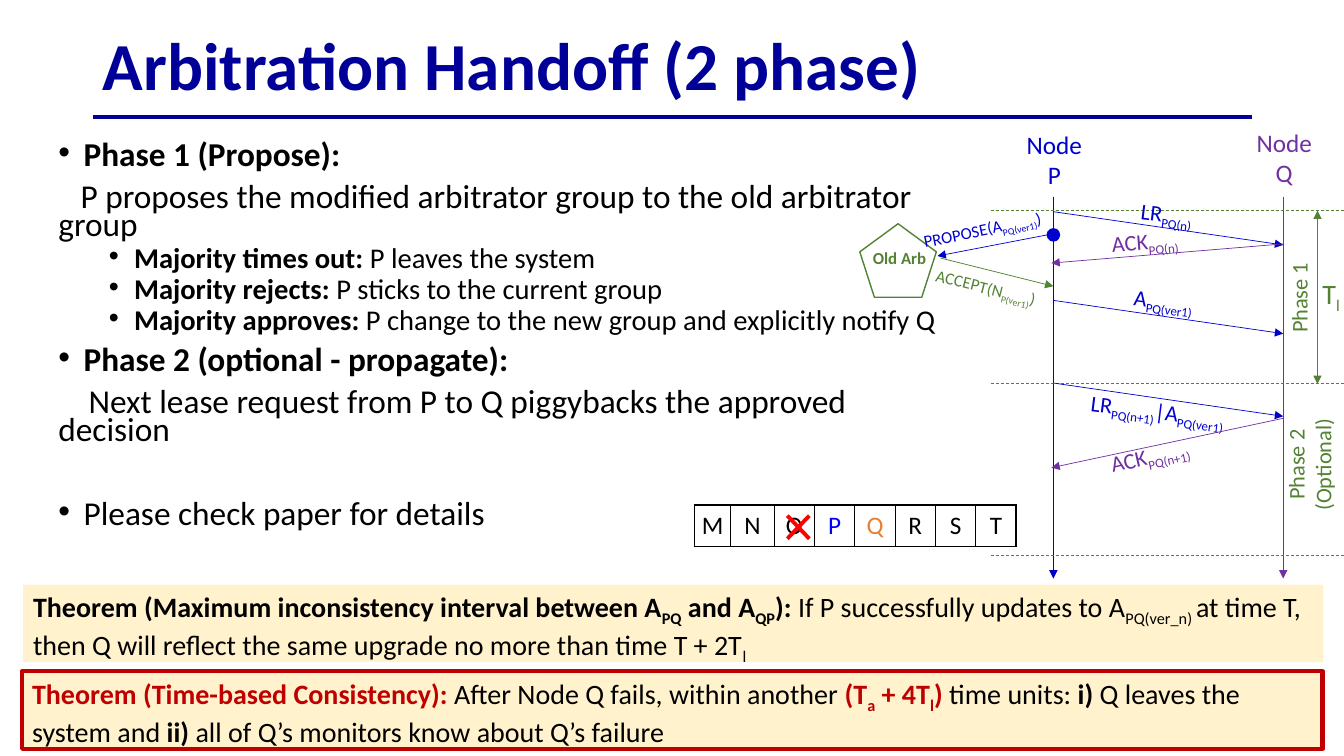
from lxml import etree
from pptx import Presentation
from pptx import util as u
from pptx.dml.color import RGBColor
from pptx.enum import dml, shapes, text
from pptx.oxml import ns

# Grid: every length below is a number of square cells, ten to the inch
CELL = u.Inches(0.1)
COLS, ROWS = 133.33, 75
FONT = "Calibri"
NAVY, BLUE, PURPLE, GREEN = "000099", "0000CC", "7030A0", "548235"
BLACK, RED, BRIGHT_RED, CREAM = "000000", "C00000", "FF0000", "FFF2CC"


def cells(*counts):
    return [u.Emu(round(count * CELL)) for count in counts]


def color(hex_string):
    return RGBColor.from_string(hex_string)


def sub(parent, tag, **attributes):
    return etree.SubElement(parent, ns.qn(tag), attributes)


def write(paragraph, runs, size, hue=BLACK):
    """Each run is (text, flags[, colour]); flags: b = bold, s = subscript."""
    for words, flags, *own_hue in runs:
        run = paragraph.add_run()
        run.text = words
        run.font.name, run.font.size = FONT, u.Pt(size)
        run.font.bold = "b" in flags
        run.font.color.rgb = color(own_hue[0] if own_hue else hue)
        if "s" in flags:
            run._r.get_or_add_rPr().set("baseline", "-25000")


def line(slide, start, end, hue, weight=0.5, heads="", dashed=False):
    connector = slide.shapes.add_connector(
        shapes.MSO_CONNECTOR.STRAIGHT, *cells(*start, *end))
    connector.line.color.rgb = color(hue)
    connector.line.width = u.Pt(weight)
    if dashed:
        connector.line.dash_style = dml.MSO_LINE.DASH
    outline = connector.line._get_or_add_ln()
    for head in heads.split():
        sub(outline, "a:" + head, type="triangle")
    sub(connector._element.spPr, "a:effectLst")


def label(slide, center, size, paragraphs, points, hue, turn=0, centered=False, wrap=True):
    (x, y), (w, h) = center, size
    box = slide.shapes.add_textbox(*cells(x - w / 2, y - h / 2, w, h))
    box.rotation = turn
    frame = box.text_frame
    frame.word_wrap = wrap
    for number, runs in enumerate(paragraphs):
        paragraph = frame.add_paragraph() if number else frame.paragraphs[0]
        if centered:
            paragraph.alignment = text.PP_ALIGN.CENTER
        write(paragraph, runs, points, hue)


def preset(slide, kind, box, fill=None, outline=None, weight=1):
    shape = slide.shapes.add_shape(kind, *cells(*box))
    shape.shadow.inherit = False
    if fill:
        shape.fill.solid()
        shape.fill.fore_color.rgb = color(fill)
    else:
        shape.fill.background()
    if outline:
        shape.line.color.rgb = color(outline)
        shape.line.width = u.Pt(weight)
    else:
        shape.line.fill.background()
    return shape


def heading(slide, box):
    left, top, width, height = box
    title = slide.shapes.title
    title.left, title.top, title.width, title.height = cells(*box)
    title.text_frame.vertical_anchor = text.MSO_ANCHOR.MIDDLE
    paragraph = title.text_frame.paragraphs[0]
    paragraph.alignment = text.PP_ALIGN.LEFT
    paragraph.line_spacing = 0.9
    write(paragraph, [("Arbitration Handoff (2 phase)", "b")], 48, NAVY)
    rule = top + 0.85 * height
    line(slide, (left, rule), (left + width, rule), NAVY, 3)


def phase_list(slide, box):
    # (level, bulleted, first-line indent, space before, runs)
    items = [
        (0, True, -2.5, 10, [("Phase 1 (Propose):", "b")]),
        (0, False, 2.2, 10, [("P proposes the modified arbitrator group to the old arbitrator group", "")]),
        (1, True, -2.5, 5, [("Majority times out: ", "b"), ("P leaves the system", "")]),
        (1, True, -2.5, 5, [("Majority rejects: ", "b"), ("P sticks to the current group", "")]),
        (1, True, -2.5, 5, [("Majority approves: ", "b"),
                            ("P change to the new group and explicitly notify Q", "")]),
        (0, True, -2.5, 10, [("Phase 2 (optional - propagate):", "b")]),
        (0, False, 3, 10, [("Next lease request from P to Q piggybacks the approved decision", "")]),
        (0, True, -2.5, 40, [("Please check paper for details", "")]),
    ]
    body = slide.placeholders[1]
    body.left, body.top, body.width, body.height = cells(*box)
    frame = body.text_frame
    frame.auto_size = text.MSO_AUTO_SIZE.NONE
    for number, (level, bulleted, indent, before, runs) in enumerate(items):
        paragraph = frame.add_paragraph() if number else frame.paragraphs[0]
        paragraph.level = level
        paragraph.line_spacing, paragraph.space_before = 0.7, u.Pt(before)
        margin = 2.5 + 5 * level if bulleted else 0
        properties = paragraph._p.get_or_add_pPr()
        for name, length in zip(("marL", "indent"), cells(margin, indent)):
            properties.set(name, str(int(length)))
        if bulleted:
            sub(properties, "a:buFont", typeface="Arial")
            sub(properties, "a:buChar", char="•")
        else:
            sub(properties, "a:buNone")
        write(paragraph, runs, 20.4 if level else 23.8)


def node_ring(slide, box):
    left, top, width, height = box
    nodes = "MNOPQRST"
    hues = {"P": "0000FF", "Q": "ED7D31"}
    widths = [3.6, 4.3] + [4] * 6
    frame = slide.shapes.add_table(1, len(nodes), *cells(*box))
    table = frame.table
    table.first_row = table.horz_banding = False
    table.rows[0].height = cells(height)[0]
    for index, node in enumerate(nodes):
        table.columns[index].width = cells(widths[index])[0]
        cell = table.cell(0, index)
        cell.margin_left = cell.margin_right = 0
        cell.vertical_anchor = text.MSO_ANCHOR.MIDDLE
        paragraph = cell.text_frame.paragraphs[0]
        paragraph.alignment = text.PP_ALIGN.CENTER
        write(paragraph, [(node, "")], 18, hues.get(node, BLACK))
        properties = cell._tc.get_or_add_tcPr()
        for side in ("a:lnL", "a:lnR", "a:lnT", "a:lnB"):
            border = sub(properties, side, w=str(int(u.Pt(1))))
            sub(sub(border, "a:solidFill"), "a:srgbClr", val=BLACK)
        cell.fill.background()
    # Cross over the failed node
    cross = preset(slide, shapes.MSO_SHAPE.MATH_MULTIPLY,
                   (left + 8.1, top + 0.1, 4.4, 4.2), BRIGHT_RED)
    cross.adjustments[0] = 0.091
    cross.rotation = 270


def handoff_diagram(slide, box):
    left, top, width, _ = box
    p_col, q_col, span_col = 19.5, 42.3, 45.7
    phase_start, phase_rows = 8.9, 17.1

    def at(col, row):
        return left + col, top + row

    # Old arbitrator group
    preset(slide, shapes.MSO_SHAPE.REGULAR_PENTAGON, (*at(0.3, 10.2), 7.6, 7.3), outline=GREEN)
    label(slide, at(5.55, 13.6), (9.9, 3), [[("Old Arb", "b")]], 12, GREEN)

    # Lifelines
    for node, col, row, hue in (("P", p_col, 3.85, BLUE), ("Q", q_col, 3.65, PURPLE)):
        label(slide, at(col + 0.1, row), (10, 7.1), [[("Node", "")], [(node, "")]],
              18, hue, centered=True)
        line(slide, at(col, 7.5), at(col, 45.4), hue, heads="tailEnd")

    # Phase limits and names
    for number in range(3):
        row = phase_start + number * phase_rows
        line(slide, at(13.3, row), at(width, row), GREEN, dashed=True)
    for center, size, names in (((43.85, 17.55), (9.1, 3.7), ["Phase 1"]),
                                ((44.9, 34.1), (11.2, 6.4), ["Phase 2", "(Optional)"])):
        label(slide, at(*center), size, [[(name, "")] for name in names],
              16, GREEN, 270, centered=True, wrap=False)
    line(slide, at(span_col, phase_start), at(span_col, phase_start + phase_rows + 0.1),
         GREEN, heads="headEnd tailEnd")
    label(slide, at(47.85, 17.1), (5.3, 4.4), [[("T", ""), ("l", "s")]], 20, GREEN)

    # Messages: start, end, colour, size, label centre, label width, turn, runs
    preset(slide, shapes.MSO_SHAPE.OVAL, (*at(p_col - 0.6, 10.7), 1.2, 1.2), BLUE, BLUE)
    messages = [
        ((p_col, 9), (q_col, 12.3), BLUE, 16, (32.45, 9.45), 10.5, 7.1,
         [("LR", ""), ("PQ(n)", "s")]),
        ((q_col, 12.2), (p_col - 0.2, 14.1), PURPLE, 16, (30.8, 11.75), 13, 355.5,
         [("ACK", ""), ("PQ(n)", "s")]),
        ((18.9, 11.3), (8, 13.4), BLUE, 12, (14.75, 10.3), 18.5, 348.5,
         [("PROPOSE(A", ""), ("PQ(ver1)", "s"), (")", "")]),
        ((8.3, 13.6), (p_col, 16.4), GREEN, 12, (15.2, 17.1), 17, 14.1,
         [("ACCEPT(N", ""), ("P(ver1)", "s"), (")", "")]),
        ((p_col, 17.8), (q_col, 21.1), BLUE, 16, (31.75, 17.95), 10.5, 7.1,
         [("A", ""), ("PQ(ver1)", "s")]),
        ((p_col, 26), (q_col, 29.3), BLUE, 16, (31.35, 28.95), 18.3, 7.1,
         [("LR", ""), ("PQ(n+1)", "s"), ("|A", ""), ("PQ(ver1)", "s")]),
        ((q_col, 29.5), (p_col - 0.2, 34.4), PURPLE, 16, (30.6, 32.85), 13, 347.2,
         [("ACK", ""), ("PQ(n+1)", "s")]),
    ]
    for start, end, hue, points, center, label_width, turn, runs in messages:
        line(slide, at(*start), at(*end), hue, heads="tailEnd")
        label(slide, at(*center), (label_width, 3.7 if points > 12 else 3), [runs], points, hue, turn)


def theorem(slide, box, runs, outline=None):
    panel = preset(slide, shapes.MSO_SHAPE.RECTANGLE, box, CREAM, outline, 3)
    frame = panel.text_frame
    frame.word_wrap = True
    frame.vertical_anchor = text.MSO_ANCHOR.TOP
    frame.paragraphs[0].alignment = text.PP_ALIGN.LEFT
    write(frame.paragraphs[0], runs, 20)


def main():
    deck = Presentation()
    deck.slide_width, deck.slide_height = cells(COLS, ROWS)
    slide = deck.slides.add_slide(deck.slide_layouts[1])
    heading(slide, (9.2, 0, 115, 13.7))
    phase_list(slide, (4.8, 13.8, 90.1, 41.3))
    node_ring(slide, (68.9, 50.1, 31.9, 4.1))
    handoff_diagram(slide, (85, 12, 48.3, 45.4))
    theorem(slide, (2.3, 58, 129, 7.7), [
        ("Theorem (Maximum inconsistency interval between A", "b"), ("PQ", "bs"),
        (" and A", "b"), ("QP", "bs"), ("): ", "b"),
        ("If P successfully updates to A", ""), ("PQ(ver_n) ", "s"),
        ("at time T, then Q will reflect the same upgrade no more than time T + 2T", ""),
        ("l", "s")])
    theorem(slide, (2.2, 66.6, 129, 7.7), [
        ("Theorem (Time-based Consistency): ", "b", RED),
        ("After Node Q fails, within another ", ""), ("(T", "b", RED), ("a", "bs", RED),
        (" + 4T", "b", RED), ("l", "bs", RED), (") ", "b", RED), ("time units: ", ""),
        ("i) ", "b"), ("Q leaves the system and ", ""), ("ii) ", "b"),
        ("all of Q’s monitors know about Q’s failure", "")], RED)
    deck.save("out.pptx")


if __name__ == "__main__":
    main()
